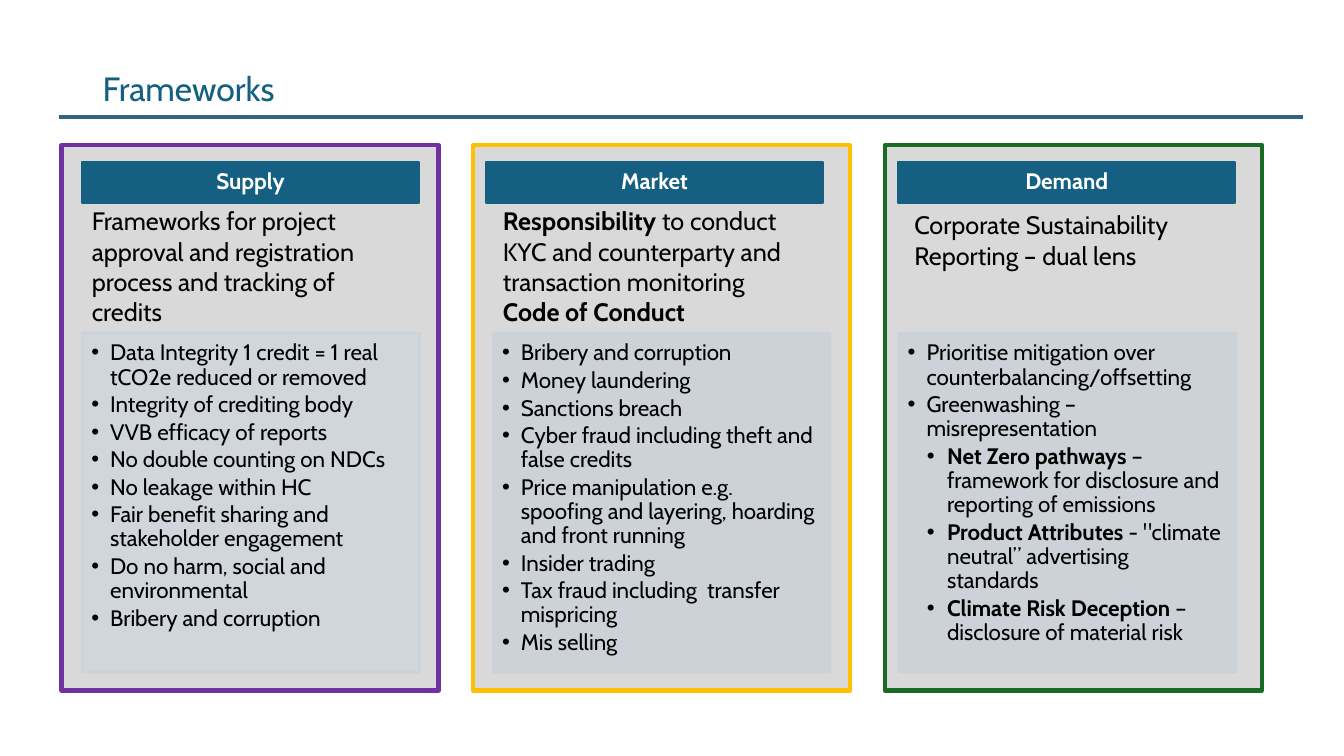
from dataclasses import dataclass

from lxml import etree
from pptx import Presentation
from pptx.dml.color import RGBColor
from pptx.enum.shapes import MSO_CONNECTOR, MSO_SHAPE
from pptx.enum.text import MSO_ANCHOR, MSO_AUTO_SIZE, PP_ALIGN
from pptx.oxml.ns import qn
from pptx.util import Pt

RECTANGLE = MSO_SHAPE.RECTANGLE
STRAIGHT = MSO_CONNECTOR.STRAIGHT
TOP, MIDDLE = MSO_ANCHOR.TOP, MSO_ANCHOR.MIDDLE
LEFT, CENTER = PP_ALIGN.LEFT, PP_ALIGN.CENTER
NO_FIT = MSO_AUTO_SIZE.NONE


@dataclass(frozen=True)
class Theme:
    font: str = "Cabin"
    title_size: int = 24
    intro_size: int = 18
    list_size: int = 16
    teal: str = "156082"
    rule: str = "326486"
    card: str = "D9D9D9"
    tint: str = "CCD2D8"
    pale: str = "D1D6DC"
    black: str = "000000"
    white: str = "FFFFFF"


theme = Theme()


def paint(shape, fill, line, width):
    shape.fill.solid()
    shape.fill.fore_color.rgb = RGBColor.from_string(fill)
    shape.line.color.rgb = RGBColor.from_string(line)
    shape.line.width = Pt(width)


def write(shape, paragraphs, size, color, margins=(7.2, 3.6, 7.2, 3.6),
          anchor=TOP, align=LEFT, spacing=1.0, after=0):
    """Fill a shape with paragraphs, each a list of (text, bold) pairs."""
    frame = shape.text_frame
    frame.word_wrap = True
    frame.auto_size = NO_FIT
    frame.vertical_anchor = anchor
    (frame.margin_left, frame.margin_top,
     frame.margin_right, frame.margin_bottom) = map(Pt, margins)
    for number, spans in enumerate(paragraphs):
        para = frame.add_paragraph() if number else frame.paragraphs[0]
        para.alignment = align
        para.line_spacing = spacing
        para.space_before = Pt(0)
        para.space_after = Pt(after)
        for text, bold in spans:
            span = para.add_run()
            span.text = text
            span.font.name = theme.font
            span.font.size = Pt(size)
            span.font.bold = bold
            span.font.color.rgb = RGBColor.from_string(color)


# Lefts are for the header, the list panel and the introduction.
columns = [
    dict(
        name="Supply", border="7030A0", panel=theme.pale,
        lefts=(58.5, 58.8, 58.5), intro_top=143.3,
        intro=[[("Frameworks for project approval and registration process "
                 "and tracking of credits", False)]],
        items=["Data Integrity 1 credit = 1 real tCO2e reduced or removed",
               "Integrity of crediting body",
               "VVB efficacy of reports",
               "No double counting on NDCs",
               "No leakage within HC",
               "Fair benefit sharing and stakeholder engagement",
               "Do no harm, social and environmental",
               "Bribery and corruption"],
        details=[]),
    dict(
        name="Market", border="FFC000", panel=theme.tint,
        lefts=(347, 352.2, 352.2), intro_top=143.3,
        intro=[[("Responsibility", True),
                (" to conduct KYC and counterparty and transaction monitoring", False)],
               [("Code of Conduct", True)]],
        items=["Bribery and corruption",
               "Money laundering",
               "Sanctions breach",
               "Cyber fraud including theft and false credits",
               "Price manipulation e.g. spoofing and layering, hoarding and front running",
               "Insider trading",
               "Tax fraud including  transfer mispricing",
               "Mis selling"],
        details=[]),
    dict(
        name="Demand", border="196B24", panel=theme.tint,
        lefts=(641.5, 642, 646), intro_top=146.2,
        intro=[[("Corporate Sustainability Reporting – dual lens", False)]],
        items=["Prioritise mitigation over counterbalancing/offsetting",
               "Greenwashing – misrepresentation"],
        details=[("Net Zero pathways ",
                  "–framework for disclosure and reporting of emissions"),
                 ("Product Attributes ", "- \"climate neutral” advertising standards"),
                 ("Climate Risk Deception ", "– disclosure of material risk")]),
]
CARD_LEFT, CARD_STEP = 44, 294
INNER_WIDTH = 241
INDENTS = [(13.5, -13.5), (28.1, -14.4)]

deck = Presentation()
deck.slide_width, deck.slide_height = Pt(960), Pt(540)
page = deck.slides.add_slide(deck.slide_layouts.get_by_name("Comparison"))
shapes = page.shapes
title, *panels, spare = page.placeholders
spare.element.getparent().remove(spare.element)

for index, (column, panel) in enumerate(zip(columns, panels)):
    header_left, panel_left, intro_left = column["lefts"]

    card = shapes.add_shape(RECTANGLE, Pt(CARD_LEFT + index * CARD_STEP), Pt(103.7),
                            Pt(269.3), Pt(389.5))
    card.shadow.inherit = False
    paint(card, theme.card, column["border"], 3)

    header = shapes.add_shape(RECTANGLE, Pt(header_left), Pt(115.9),
                              Pt(INNER_WIDTH), Pt(29))
    header.shadow.inherit = False
    paint(header, theme.teal, theme.teal, 1.5)
    write(header, [[(column["name"], True)]], theme.list_size, theme.white,
          (8.6, 5, 8.6, 5), MIDDLE, CENTER, 0.9)

    # The list panel is moved in front of its card.
    card.element.getparent().append(panel.element)
    panel.left, panel.top = Pt(panel_left), Pt(237.6)
    panel.width, panel.height = Pt(INNER_WIDTH), Pt(242.6)
    paint(panel, column["panel"], theme.tint, 1.5)
    for tint in panel.element.spPr.iter(qn("a:srgbClr")):
        if tint.get("val") == theme.tint:
            etree.SubElement(tint, qn("a:alpha"), val="90000")
    bullets = [[(item, False)] for item in column["items"]]
    bullets += [[(lead, True), (rest, False)] for lead, rest in column["details"]]
    write(panel, bullets, theme.list_size, theme.black,
          (6.4, 6.4, 8.6, 9.6), spacing=0.9, after=2.4)
    for number, para in enumerate(panel.text_frame.paragraphs):
        para.level = int(number >= len(column["items"]))
        margin, indent = INDENTS[para.level]
        properties = para._p.get_or_add_pPr()
        properties.set("marL", str(Pt(margin)))
        properties.set("indent", str(Pt(indent)))
        etree.SubElement(properties, qn("a:buFont"), typeface="Arial")
        etree.SubElement(properties, qn("a:buChar"), char="•")

    intro = shapes.add_textbox(Pt(intro_left), Pt(column["intro_top"]),
                               Pt(INNER_WIDTH), Pt(94.3))
    write(intro, column["intro"], theme.intro_size, theme.black)

title.left, title.top, title.width, title.height = Pt(66.2), Pt(28.8), Pt(828), Pt(71.3)
write(title, [[("Frameworks", False)]], theme.title_size, theme.teal,
      anchor=MIDDLE, spacing=0.9)

rule = shapes.add_connector(STRAIGHT, Pt(42), Pt(83.6), Pt(931), Pt(83.6))
rule.line.color.rgb = RGBColor.from_string(theme.rule)
rule.line.width = Pt(3)
etree.SubElement(rule.element.spPr, qn("a:effectLst"))

deck.save("out.pptx")
